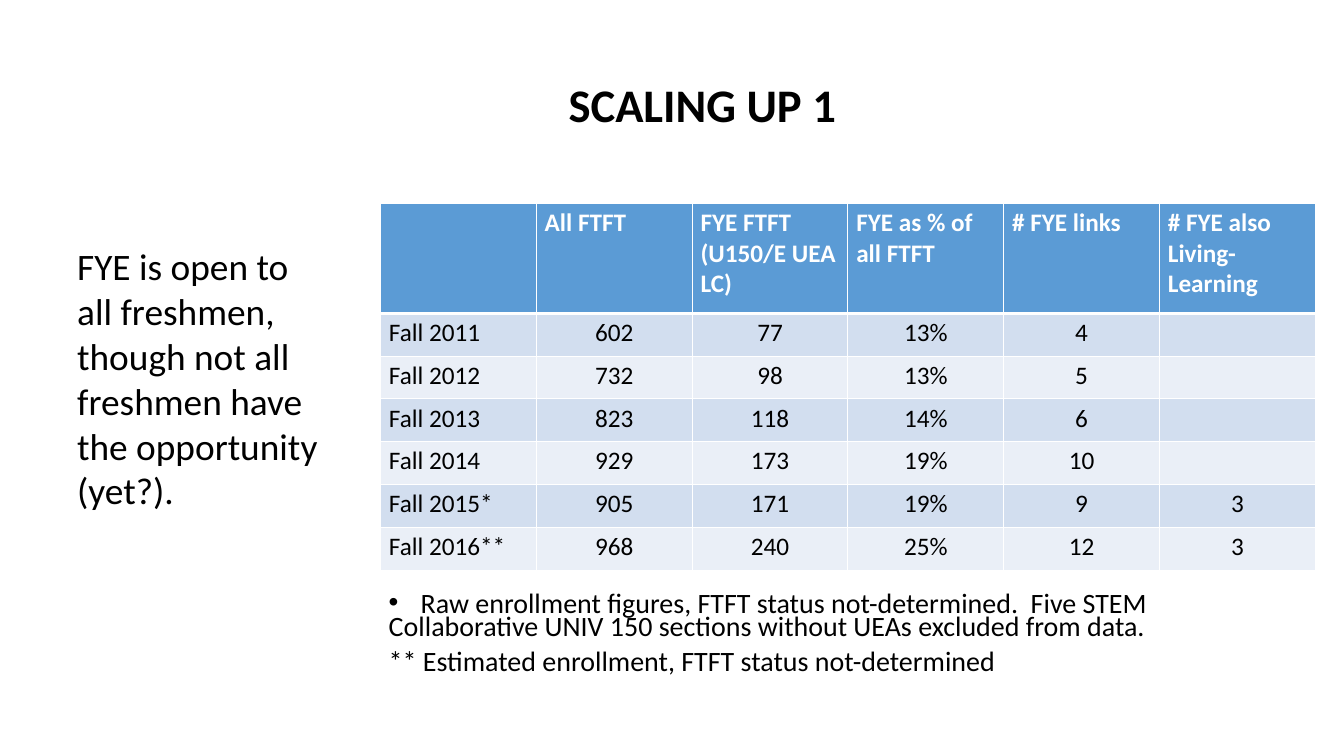
from lxml import etree
from pptx import Presentation
from pptx.dml.color import RGBColor
from pptx.enum.text import MSO_AUTO_SIZE as AutoSize, PP_ALIGN as Align
from pptx.oxml.ns import qn
from pptx.util import Inches, Pt

COLORS = {
    "text": "000000",
    "white": "FFFFFF",
    "header": "5B9BD5",
    "odd": "D2DEEF",
    "even": "EAEFF7",
}


def style(paragraph, size, color="text", bold=False):
    font = paragraph.font
    font.name = "Calibri"
    font.size = Pt(size)
    font.bold = bold
    font.color.rgb = RGBColor.from_string(COLORS[color])


def add_text(left, top, width, height, wrap=True):
    box = slide.shapes.add_textbox(Inches(left), Inches(top), Inches(width), Inches(height))
    frame = box.text_frame
    frame.word_wrap = wrap
    frame.auto_size = AutoSize.SHAPE_TO_FIT_TEXT
    return frame


prs = Presentation()
prs.slide_width = Inches(16)
prs.slide_height = Inches(9)
slide = prs.slides.add_slide(prs.slide_layouts[6])

title = add_text(6.67, 0.85, 3.42, 0.77, wrap=False).paragraphs[0]
title.text = "SCALING UP 1"
style(title, 40, bold=True)

intro = add_text(0.82, 2.85, 3.22, 3.33).paragraphs[0]
intro.text = "FYE is open to all freshmen, though not all freshmen have the opportunity (yet?)."
style(intro, 32)

enrollment = [
    ["", "All FTFT", "FYE FTFT\n(U150/E UEA LC)", "FYE as % of all FTFT",
     "# FYE links", "# FYE also Living- Learning"],
    ["Fall 2011", "602", "77", "13%", "4", ""],
    ["Fall 2012", "732", "98", "13%", "5", ""],
    ["Fall 2013", "823", "118", "14%", "6", ""],
    ["Fall 2014", "929", "173", "19%", "10", ""],
    ["Fall 2015*", "905", "171", "19%", "9", "3"],
    ["Fall 2016**", "968", "240", "25%", "12", "3"],
]
table = slide.shapes.add_table(
    len(enrollment), len(enrollment[0]),
    Inches(4.53), Inches(2.42), Inches(11.13), Inches(4.36)).table
for column in table.columns:
    column.width = Inches(11.13 / 6)

for r, values in enumerate(enrollment):
    is_header = r == 0
    table.rows[r].height = Inches(1.31 if is_header else 0.51)
    band = "header" if is_header else "odd" if r % 2 else "even"
    for c, value in enumerate(values):
        cell = table.cell(r, c)
        borders = {"lnL": 1, "lnR": 1, "lnT": 3 if r == 1 else 1, "lnB": 3 if is_header else 1}
        for side, points in borders.items():
            line = etree.SubElement(cell._tc.get_or_add_tcPr(), qn(f"a:{side}"), w=str(Pt(points)))
            fill = etree.SubElement(line, qn("a:solidFill"))
            etree.SubElement(fill, qn("a:srgbClr"), val=COLORS["white"])
        cell.fill.solid()
        cell.fill.fore_color.rgb = RGBColor.from_string(COLORS[band])
        cell.text = value
        for paragraph in cell.text_frame.paragraphs:
            if c and not is_header:
                paragraph.alignment = Align.CENTER
            style(paragraph, 21.6, "white" if is_header else "text", is_header)

footnotes = [
    ("Raw enrollment figures, FTFT status not-determined.  Five STEM", 0),
    ("Collaborative UNIV 150 sections without UEAs excluded from data.", 10),
    ("** Estimated enrollment, FTFT status not-determined", 20),
]
notes = add_text(4.53, 7.18, 10.67, 0.94)
for i, (note, gap) in enumerate(footnotes):
    paragraph = notes.add_paragraph() if i else notes.paragraphs[0]
    paragraph.text = note
    paragraph.line_spacing = Pt(10)
    paragraph.space_before = Pt(gap)
    if i == 0:
        props = paragraph._p.get_or_add_pPr()
        props.set("marL", str(Inches(0.38)))
        props.set("indent", str(Inches(-0.38)))
        etree.SubElement(props, qn("a:buFont"), typeface="Arial")
        etree.SubElement(props, qn("a:buChar"), char="•")
    style(paragraph, 24)

prs.save("out.pptx")
